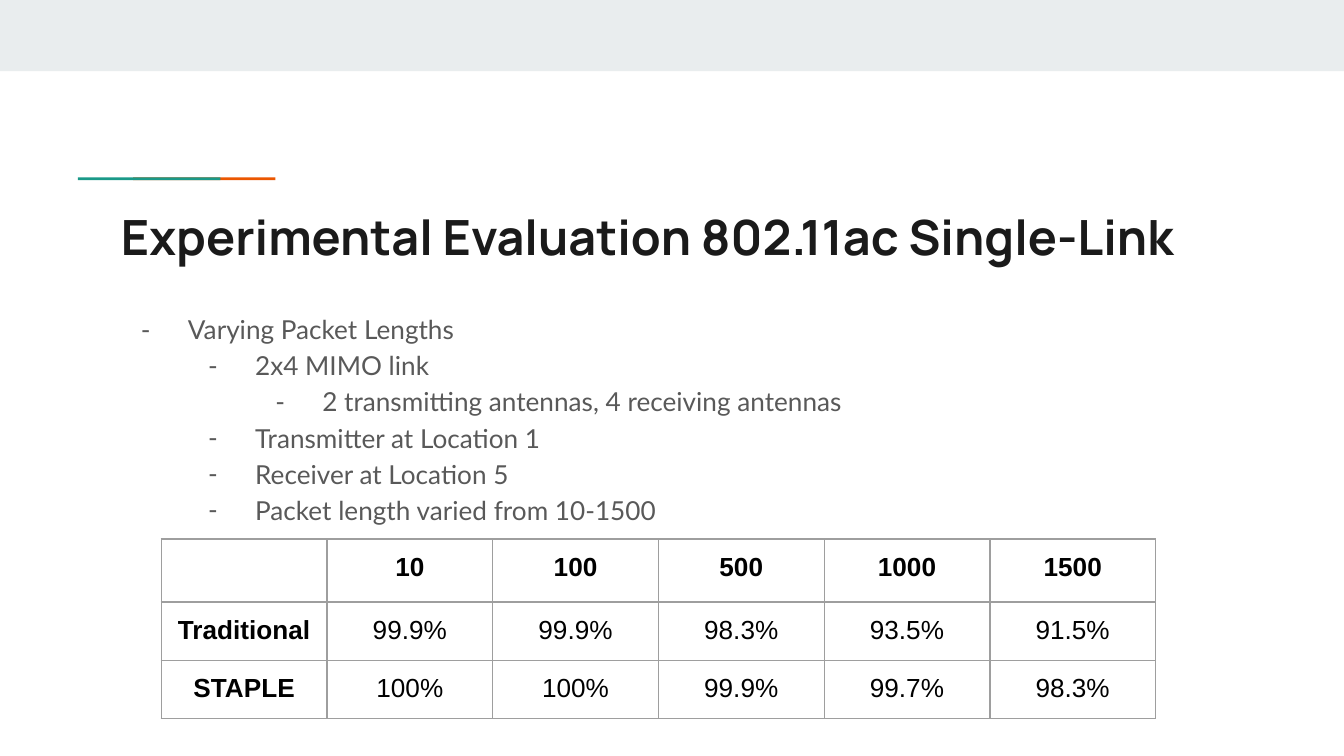
from lxml.etree import SubElement
from pptx import Presentation
from pptx.dml.color import RGBColor
from pptx.enum.shapes import MSO_SHAPE
from pptx.enum.text import MSO_ANCHOR, MSO_AUTO_SIZE, PP_ALIGN
from pptx.oxml.ns import qn
from pptx.util import Inches, Pt

COLORS = {"band": "E9EDEE", "orange": "EB5600", "teal": "1A9988",
          "title": "1A1A1A", "body": "595959", "table": "000000", "border": "9E9E9E"}

# 16:9 slide
prs = Presentation()
prs.slide_width = Inches(10)
prs.slide_height = prs.slide_width * 9 // 16
s = prs.slides.add_slide(prs.slide_layouts[5])


def format_run(r, font, size, color, bold=False):
    r.font.name, r.font.size, r.font.bold = font, Pt(size), bold
    r.font.color.rgb = RGBColor.from_string(COLORS[color])


# Top band and two-colour accent line; teal overlaps orange
for color, x, y, w, h in [("band", 0, 0, 10, 0.53),
                          ("orange", 0.99, 1.32, 1.06, 0.02),
                          ("teal", 0.58, 1.32, 1.06, 0.02)]:
    sp = s.shapes.add_shape(MSO_SHAPE.RECTANGLE, Inches(x), Inches(y), Inches(w), Inches(h))
    sp.shadow.inherit = False
    sp.fill.solid()
    sp.fill.fore_color.rgb = RGBColor.from_string(COLORS[color])
    sp.line.fill.background()

# Title
title = s.shapes.title
title.left, title.top, title.width, title.height = (Inches(v) for v in (0.8, 1.44, 8.41, 0.59))
tf = title.text_frame
tf.text = "Experimental Evaluation 802.11ac Single-Link"
tf.auto_size, tf.vertical_anchor = MSO_AUTO_SIZE.NONE, MSO_ANCHOR.TOP
tf.margin_left = tf.margin_right = tf.margin_top = tf.margin_bottom = Inches(0.1)
p = tf.paragraphs[0]
p.alignment = PP_ALIGN.LEFT
format_run(p.runs[0], "Manrope", 26, "title", True)

# Dashed list: level and text
items = [(0, "Varying Packet Lengths"),
         (1, "2x4 MIMO link"),
         (2, "2 transmitting antennas, 4 receiving antennas"),
         (1, "Transmitter at Location 1"),
         (1, "Receiver at Location 5"),
         (1, "Packet length varied from 10-1500")]
tf = s.shapes.add_textbox(Inches(0.8), Inches(2.2), Inches(7.92), Inches(1.81)).text_frame
tf.word_wrap = True
tf.margin_left = tf.margin_right = tf.margin_top = tf.margin_bottom = Inches(0.1)
for i, (level, text) in enumerate(items):
    p = tf.add_paragraph() if i else tf.paragraphs[0]
    p.text, p.level, p.line_spacing = text, level, 1.15
    format_run(p.runs[0], "Lato", 14, "body")
    pPr = p._p.get_or_add_pPr()
    pPr.set("marL", str(Inches(0.5 * (level + 1))))
    pPr.set("indent", str(Inches(-0.35)))
    SubElement(SubElement(pPr, qn("a:buClr")), qn("a:srgbClr"), val=COLORS["body"])
    SubElement(pPr, qn("a:buFont"), typeface="Lato")
    SubElement(pPr, qn("a:buChar"), char="-")

# Results table: packet lengths across, schemes down
rows = [["", "10", "100", "500", "1000", "1500"],
        ["Traditional", "99.9%", "99.9%", "98.3%", "93.5%", "91.5%"],
        ["STAPLE", "100%", "100%", "99.9%", "99.7%", "98.3%"]]
row_heights = [0.47, 0.42, 0.42]
table = s.shapes.add_table(len(rows), len(rows[0]), Inches(1.2), Inches(4.01),
                           Inches(7.4), Inches(sum(row_heights))).table
for i, row in enumerate(rows):
    table.rows[i].height = Inches(row_heights[i])
    for j, text in enumerate(row):
        cell = table.cell(i, j)
        cell.margin_left = cell.margin_right = Inches(0.1)
        cell.margin_top = cell.margin_bottom = Inches(0.1 if text else 0)
        if text:
            p = cell.text_frame.paragraphs[0]
            p.text, p.alignment = text, PP_ALIGN.CENTER
            format_run(p.runs[0], "Arial", 14, "table", i == 0 or j == 0)
        # Borders come before the fill in the cell properties
        tcPr = cell._tc.get_or_add_tcPr()
        for side in ("lnL", "lnR", "lnT", "lnB"):
            ln = SubElement(tcPr, qn(f"a:{side}"), w=str(Pt(0.75)))
            SubElement(SubElement(ln, qn("a:solidFill")), qn("a:srgbClr"), val=COLORS["border"])
        cell.fill.background()

prs.save("out.pptx")
